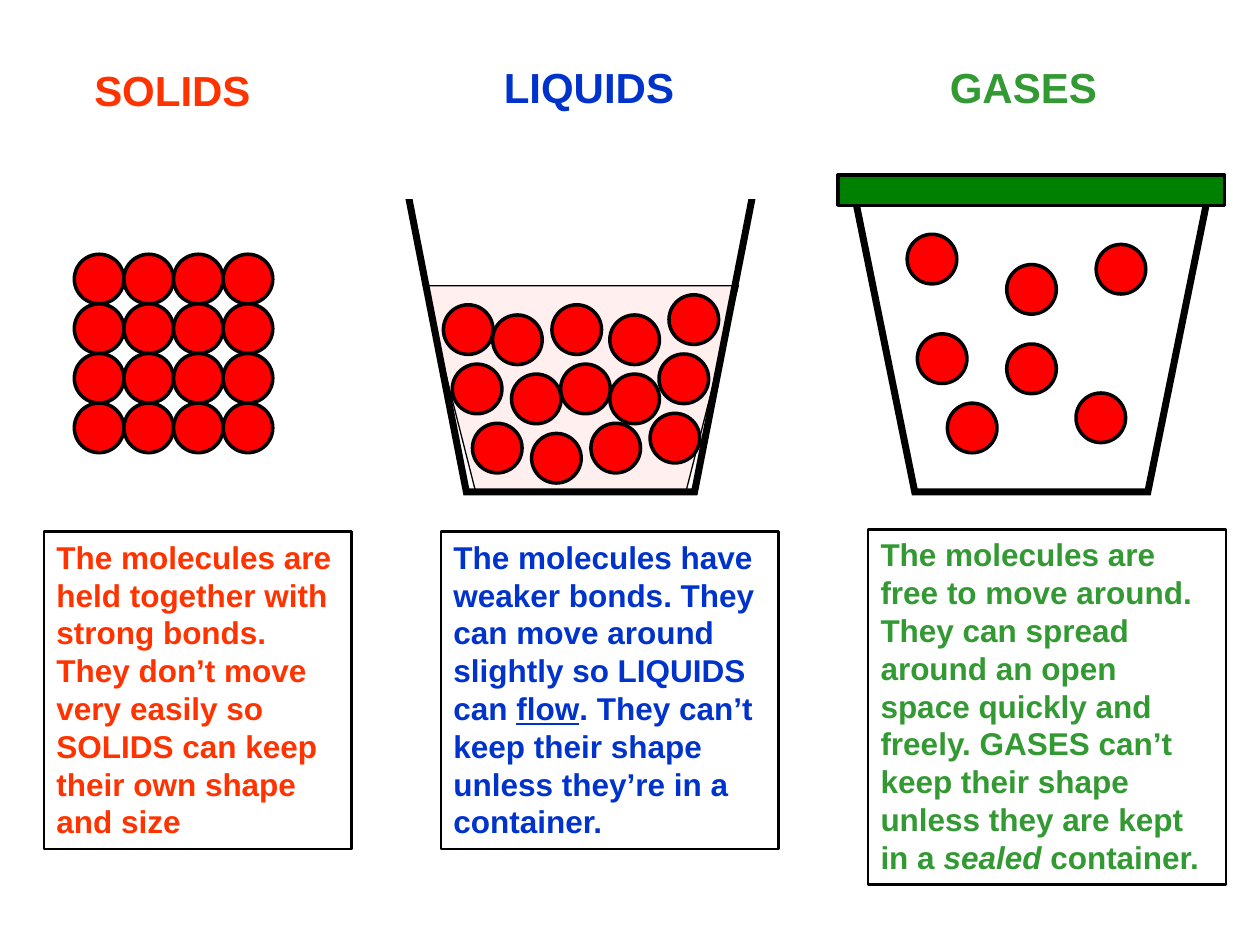
from lxml import etree
from pptx import Presentation
from pptx.dml.color import RGBColor
from pptx.enum.shapes import MSO_CONNECTOR, MSO_SHAPE
from pptx.enum.text import MSO_ANCHOR, MSO_AUTO_SIZE, PP_ALIGN
from pptx.oxml.ns import qn
from pptx.util import Pt

RECT = MSO_SHAPE.RECTANGLE
OVAL = MSO_SHAPE.OVAL
STRAIGHT = MSO_CONNECTOR.STRAIGHT
GROW = MSO_AUTO_SIZE.SHAPE_TO_FIT_TEXT
TOP = MSO_ANCHOR.TOP
LEFT = PP_ALIGN.LEFT

BLACK = RGBColor(0x00, 0x00, 0x00)
WHITE = RGBColor(0xFF, 0xFF, 0xFF)
RED = RGBColor(0xFF, 0x00, 0x00)
PINK = RGBColor(0xFF, 0xEF, 0xEF)
LID = RGBColor(0x00, 0x80, 0x00)
ORANGE = RGBColor(0xFF, 0x33, 0x00)
BLUE = RGBColor(0x00, 0x33, 0xCC)
GREEN = RGBColor(0x33, 0x99, 0x33)

BALL = 28.35

# Heading: text, left, top, width, colour
HEADS = [
    ("SOLIDS", 46.8, 33.1, 103.7, ORANGE),
    ("GASES", 535.7, 31.7, 98.6, GREEN),
    ("LIQUIDS", 280.8, 31.7, 111.6, BLUE),
]

# Note: left, top, width, height, colour, runs with their style
NOTES = [
    (25.2, 303.8, 175.7, 181.4, ORANGE, [
        ("The molecules are held together with strong bonds. They don’t move "
         "very easily so SOLIDS can keep their own shape and size", None)]),
    (496.1, 302.4, 204.5, 203, GREEN, [
        ("The molecules are free to move around. They can spread around an "
         "open space quickly and freely. GASES can’t keep their shape unless "
         "they are kept in a ", None),
        ("sealed", "italic"),
        (" container.", None)]),
    (252, 303.8, 193, 181.4, BLUE, [
        ("The molecules have weaker bonds. They can move around slightly so "
         "LIQUIDS can ", None),
        ("flow", "underline"),
        (". They can’t keep their shape unless they’re in a container.",
         None)]),
]

# Left and top of each loose molecule
LIQUID = [
    (371.5, 236.2), (292.3, 213.8), (258.5, 208.1), (253.4, 174.2),
    (376.6, 202.3), (337.7, 241.9), (270, 241.9), (348.5, 213.8),
    (320.4, 208.1), (303.8, 247.7), (281.5, 180), (315.4, 174.2),
    (348.5, 180), (382.3, 168.5),
]
GAS = [
    (575.3, 196.6), (524.2, 190.8), (518.4, 133.9), (626.4, 139.7),
    (575.3, 151.2), (614.9, 224.6), (541.4, 230.4),
]


def paint(shape, fill=None, width=None):
    shape.shadow.inherit = False
    if fill is None:
        shape.fill.background()
    else:
        shape.fill.solid()
        shape.fill.fore_color.rgb = fill
    if width is None:
        shape.line.fill.background()
    else:
        shape.line.color.rgb = BLACK
        shape.line.width = Pt(width)


def add_box(shapes, kind, box, fill=None, width=None):
    shape = shapes.add_shape(kind, *map(Pt, box))
    paint(shape, fill, width)
    return shape


def add_ball(shapes, left, top):
    add_box(shapes, OVAL, (left, top, BALL, BALL), RED, 2)


def add_cup(shapes, left, top, width, height, inset, fill, line):
    right, base = left + width, top + height
    pen = shapes.build_freeform(Pt(left), Pt(top))
    pen.add_line_segments([
        (Pt(left + inset), Pt(base)),
        (Pt(right - inset), Pt(base)),
        (Pt(right), Pt(top)),
    ])
    cup = pen.convert_to_shape()
    paint(cup, fill, line)
    # Sharp corners
    edge = cup.line._get_or_add_ln()
    etree.SubElement(edge, qn("a:miter"), lim="800000")


def add_pot(slide, left, width, inset, rim):
    """An outlined cup whose top edge is hidden by a white strip."""
    group = slide.shapes.add_group_shape()
    add_cup(group.shapes, left, 103.9, width, 177.2, inset, None, 4)
    add_box(group.shapes, RECT, rim, WHITE)


def set_font(para, size, color):
    para.alignment = LEFT
    font = para.font
    font.name, font.size, font.bold = "Arial", Pt(size), True
    font.color.rgb = color


def add_head(slide, text, left, top, width, color):
    box = slide.shapes.add_textbox(Pt(left), Pt(top), Pt(width), Pt(36))
    frame = box.text_frame
    frame.word_wrap = False
    frame.auto_size = GROW
    frame.text = text
    set_font(frame.paragraphs[0], 24, color)


def add_note(slide, left, top, width, height, color, runs):
    box = add_box(slide.shapes, RECT, (left, top, width, height), None, 1.5)
    frame = box.text_frame
    frame.word_wrap = True
    frame.auto_size = GROW
    frame.vertical_anchor = TOP
    para = frame.paragraphs[0]
    set_font(para, 18, color)
    for text, style in runs:
        run = para.add_run()
        run.text = text
        if style:
            setattr(run.font, style, True)


def add_base(slide, left, right, top):
    line = slide.shapes.add_connector(
        STRAIGHT, Pt(left), Pt(top), Pt(right), Pt(top))
    line.line.color.rgb = BLACK
    line.line.width = Pt(3)
    etree.SubElement(line._element.spPr, qn("a:effectLst"))


def main():
    deck = Presentation()
    deck.slide_width, deck.slide_height = Pt(720), Pt(540)
    slide = deck.slides.add_slide(deck.slide_layouts[6])
    shapes = slide.shapes

    # Liquid
    add_cup(shapes, 241.9, 163.3, 180, 118.1, 30, PINK, 0.75)

    # Solid: a tight grid of molecules
    solid = shapes.add_group_shape()
    for row in range(4):
        for col in range(4):
            add_ball(solid.shapes, 42.5 + col * BALL, 145.3 + row * BALL)

    # Headings
    for head in HEADS:
        add_head(slide, *head)

    # Pots, gas then liquid
    add_pot(slide, 486.7, 205.2, 36, (478.8, 94.3, 221, 19.4))
    add_pot(slide, 231.8, 199.8, 34.7, (223.9, 94.3, 215.3, 19.4))
    add_base(slide, 269.3, 393.8, 281.3)

    # Loose molecules
    for left, top in LIQUID + GAS:
        add_ball(shapes, left, top)

    # Notes
    for note in NOTES:
        add_note(slide, *note)

    # Lid of the gas pot
    add_box(shapes, RECT, (478.8, 100.1, 221, 17.3), LID, 2)

    deck.save("out.pptx")


if __name__ == "__main__":
    main()
